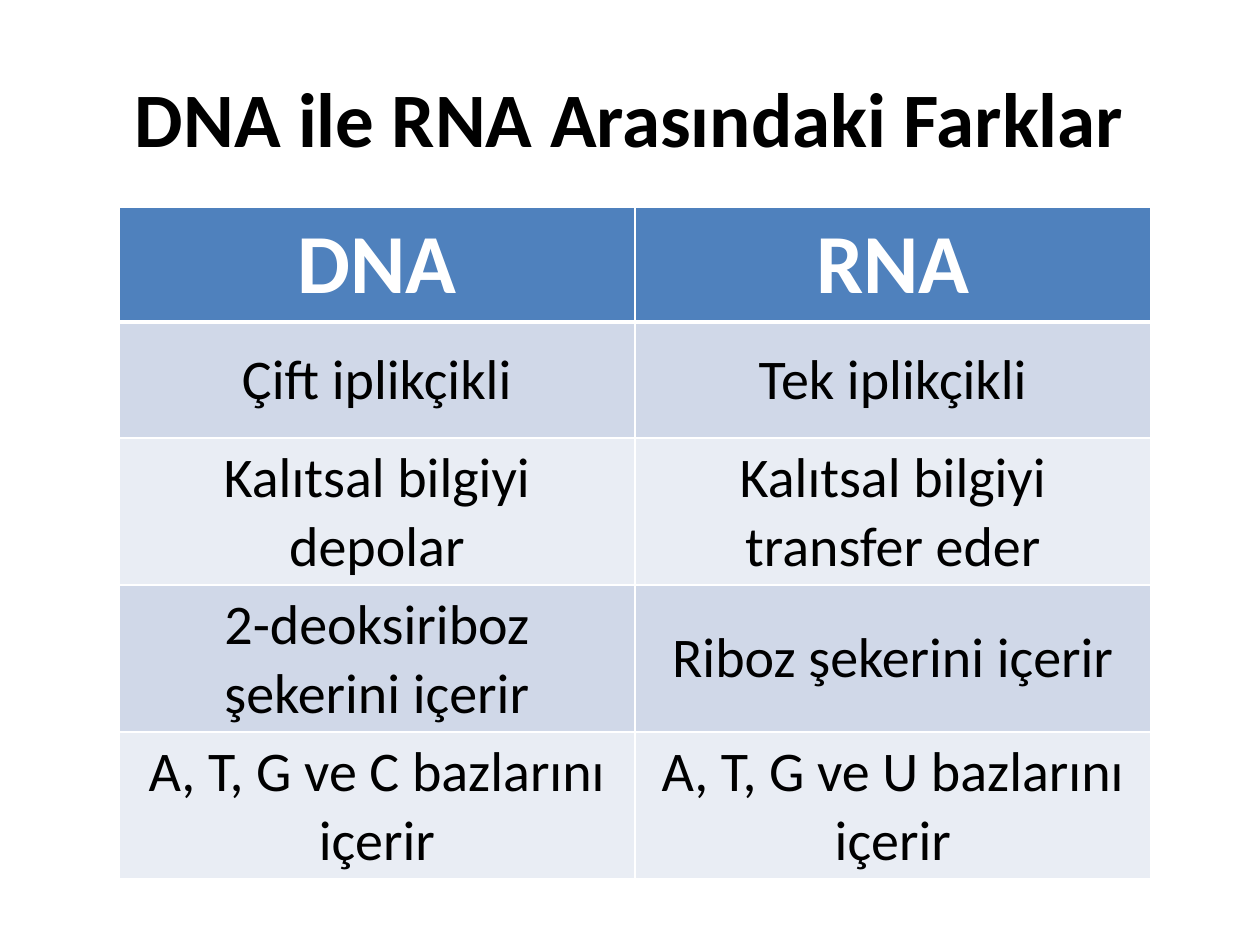
from lxml.etree import SubElement
from pptx import Presentation
from pptx.dml.color import RGBColor
from pptx.enum.text import MSO_ANCHOR as Anchor, PP_ALIGN as Align
from pptx.oxml.ns import qn
from pptx.util import Emu, Pt

# Content
TITLE = "DNA ile RNA Arasındaki Farklar"
HEADINGS = ("DNA", "RNA")
DIFFERENCES = [
    ("Çift iplikçikli", "Tek iplikçikli"),
    ("Kalıtsal bilgiyi depolar", "Kalıtsal bilgiyi transfer eder"),
    ("2-deoksiriboz şekerini içerir", "Riboz şekerini içerir"),
    ("A, T, G ve C bazlarını içerir", "A, T, G ve U bazlarını içerir"),
]

COLORS = {
    "black": "000000",
    "white": "FFFFFF",
    "header": "4F81BD",
    "odd": "D0D8E8",
    "even": "E9EDF4",
}
FONT = "Calibri"

# Geometry in px, 126 to the inch
SLIDE = (1260, 945)
TITLE_BOX = (63, 38, 1134, 157)
TABLE_LEFT, TABLE_TOP = 119, 207
COLUMN_WIDTH = 516
HEADER_HEIGHT, ROW_HEIGHT = 115, 116


def px(length):
    return Emu(round(length * 914400 / 126))


def write(frame, text, size, color="black", bold=False):
    frame.word_wrap = True
    paragraph = frame.paragraphs[0]
    paragraph.alignment = Align.CENTER
    run = paragraph.add_run()
    run.text = text
    run.font.name = FONT
    run.font.size = Pt(size)
    run.font.bold = bold
    run.font.color.rgb = RGBColor.from_string(COLORS[color])


def add_borders(cell, bottom, top):
    properties = cell._tc.get_or_add_tcPr()
    for side, width in (("L", 1), ("R", 1), ("T", top), ("B", bottom)):
        line = SubElement(properties, qn(f"a:ln{side}"), w=str(Pt(width)))
        fill = SubElement(line, qn("a:solidFill"))
        SubElement(fill, qn("a:srgbClr"), val=COLORS["white"])


presentation = Presentation()
presentation.slide_width, presentation.slide_height = map(px, SLIDE)
slide = presentation.slides.add_slide(presentation.slide_layouts[6])

# Title
title = slide.shapes.add_textbox(*map(px, TITLE_BOX)).text_frame
title.vertical_anchor = Anchor.MIDDLE
write(title, TITLE, size=44, bold=True)

# Comparison table
rows = [HEADINGS, *DIFFERENCES]
heights = [HEADER_HEIGHT] + [ROW_HEIGHT] * len(DIFFERENCES)
table = slide.shapes.add_table(
    len(rows), len(HEADINGS), px(TABLE_LEFT), px(TABLE_TOP),
    px(COLUMN_WIDTH * len(HEADINGS)), px(sum(heights)),
).table
for column in table.columns:
    column.width = px(COLUMN_WIDTH)

for r, (texts, height) in enumerate(zip(rows, heights)):
    table.rows[r].height = px(height)
    is_header = r == 0
    band = "header" if is_header else ("even", "odd")[r % 2]
    for c, text in enumerate(texts):
        cell = table.cell(r, c)
        cell.vertical_anchor = Anchor.MIDDLE
        add_borders(cell, bottom=3 if is_header else 1, top=3 if r == 1 else 1)
        cell.fill.solid()
        cell.fill.fore_color.rgb = RGBColor.from_string(COLORS[band])
        write(cell.text_frame, text, size=48 if is_header else 32,
              color="white" if is_header else "black", bold=is_header)

presentation.save("out.pptx")
